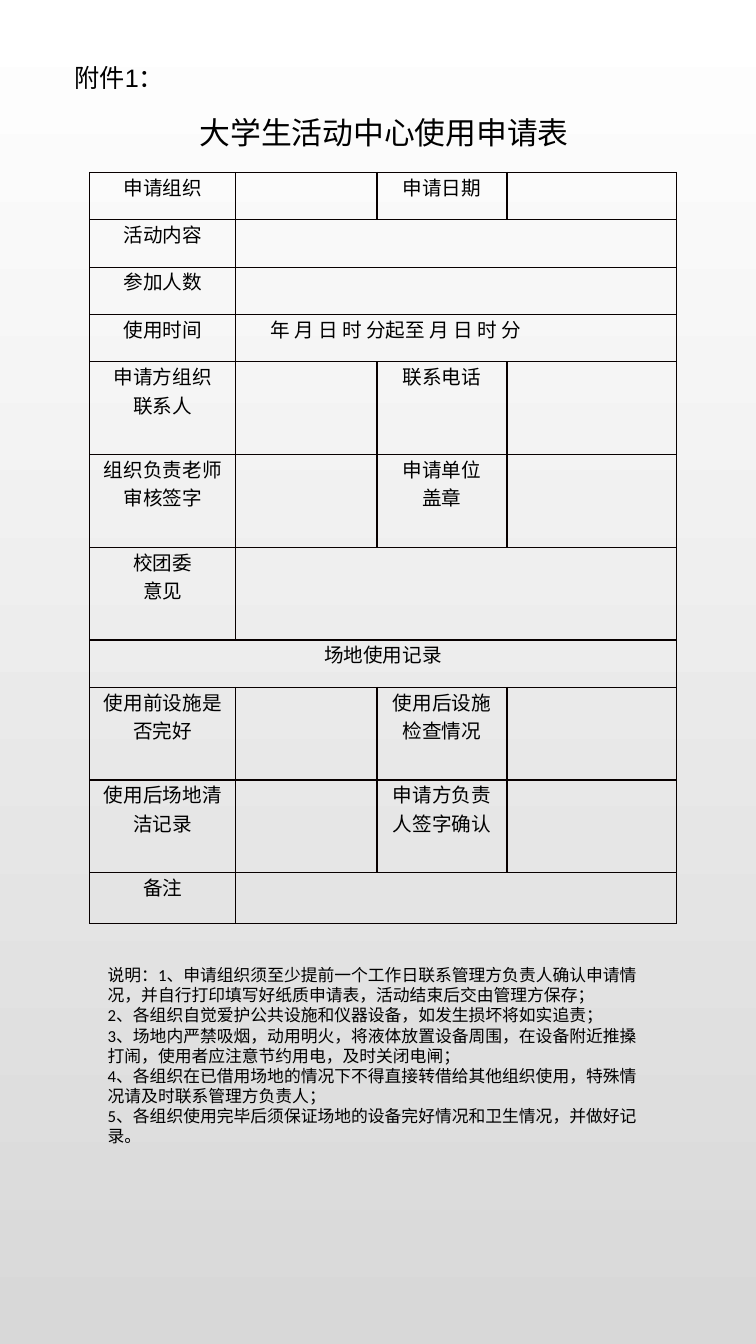
from dataclasses import dataclass

from lxml.etree import SubElement
from pptx import Presentation
from pptx.dml.color import RGBColor
from pptx.enum.text import MSO_ANCHOR as Anchor, MSO_AUTO_SIZE as AutoSize, PP_ALIGN as Align
from pptx.oxml.ns import qn
from pptx.util import Pt

PX = 9144


@dataclass(frozen=True)
class Theme:
    """Colours, fonts and type sizes of the form."""
    ink: str = "000000"
    rule: str = "080000"
    page_top: str = "FFFFFF"
    page_bottom: str = "D8D8D8"
    chinese: str = "Noto Sans CJK SC"
    body: str = "Calibri"
    label: str = "Arial"
    title_size: int = 22
    label_size: int = 18
    cell_size: int = 14
    guide_size: int = 12
    guide_leading: float = 14.4


THEME = Theme()

COLUMNS = [145, 140, 129, 168]
SHORT, TALL, LAST = 47, 92, 50
TIME_SPAN = "年 月 日 时 分起至 月 日 时 分"
TIME_INDENT = 27
ROWS = [
    (SHORT, ["申请组织", "", "申请日期", ""]),
    (SHORT, ["活动内容", ""]),
    (SHORT, ["参加人数", ""]),
    (SHORT, ["使用时间", TIME_SPAN]),
    (TALL, ["申请方组织\n联系人", "", "联系电话", ""]),
    (TALL, ["组织负责老师审核签字", "", "申请单位\n盖章", ""]),
    (TALL, ["校团委\n意见", ""]),
    (SHORT, ["场地使用记录"]),
    (TALL, ["使用前设施是否完好", "", "使用后设施检查情况", ""]),
    (TALL, ["使用后场地清洁记录", "", "申请方负责人签字确认", ""]),
    (LAST, ["备注", ""]),
]
GUIDE = [
    "说明：1、申请组织须至少提前一个工作日联系管理方负责人确认申请情况，并自行打印填写好纸质申请表，活动结束后交由管理方保存；",
    "2、各组织自觉爱护公共设施和仪器设备，如发生损坏将如实追责；",
    "3、场地内严禁吸烟，动用明火，将液体放置设备周围，在设备附近推搡打闹，使用者应注意节约用电，及时关闭电闸；",
    "4、各组织在已借用场地的情况下不得直接转借给其他组织使用，特殊情况请及时联系管理方负责人；",
    "5、各组织使用完毕后须保证场地的设备完好情况和卫生情况，并做好记录。",
]


def write(frame, text, font, size, align=Align.LEFT):
    """Fill a text frame with one paragraph per line of text."""
    frame.text = text
    for para in frame.paragraphs:
        para.alignment = align
        para.font.name = font
        para.font.size = Pt(size)
        para.font.color.rgb = RGBColor.from_string(THEME.ink)
        for span in para.runs:
            SubElement(span.font._element, qn("a:ea"), typeface=THEME.chinese)


def place(shape, box):
    """Move a shape to a px box."""
    shape.left, shape.top, shape.width, shape.height = (n * PX for n in box)


def fit_frame(frame, anchor):
    """Wrap a text frame at a fixed size with even insets."""
    frame.word_wrap = True
    frame.auto_size = AutoSize.NONE
    frame.vertical_anchor = anchor
    frame.margin_left = frame.margin_right = 10 * PX
    frame.margin_top = frame.margin_bottom = 5 * PX


def paint_background(page):
    """Shade the page from top to bottom."""
    fill = page.background.fill
    fill.gradient()
    fill.gradient_angle = 270
    for stop, colour in zip(fill.gradient_stops, (THEME.page_top, THEME.page_bottom)):
        stop.color.rgb = RGBColor.from_string(colour)


def add_title(page, box):
    """Set the form's name in the title placeholder."""
    title = page.shapes.title
    place(title, box)
    fit_frame(title.text_frame, Anchor.MIDDLE)
    write(title.text_frame, "大学生活动中心使用申请表", THEME.body, THEME.title_size, Align.CENTER)


def add_label(page, box):
    """Add the attachment number."""
    frame = page.shapes.add_textbox(*(n * PX for n in box)).text_frame
    fit_frame(frame, Anchor.MIDDLE)
    write(frame, "附件1：", THEME.label, THEME.label_size)


def add_guide(page, box):
    """Add the numbered instructions."""
    frame = page.shapes.add_textbox(*(n * PX for n in box)).text_frame
    fit_frame(frame, Anchor.TOP)
    write(frame, "\n".join(GUIDE), THEME.body, THEME.guide_size)
    for para in frame.paragraphs:
        para.line_spacing = Pt(THEME.guide_leading)


def style_cell(cell):
    """Give a cell thin rules, no fill and tight insets."""
    cell.margin_left = cell.margin_right = 7 * PX
    cell.margin_top = cell.margin_bottom = 0
    properties = cell._tc.get_or_add_tcPr()
    for side in ("lnL", "lnR", "lnT", "lnB"):
        line = SubElement(properties, qn(f"a:{side}"), w=str(Pt(1)))
        solid = SubElement(line, qn("a:solidFill"))
        SubElement(solid, qn("a:srgbClr"), val=THEME.rule)
    cell.fill.background()


def add_form(page, box):
    """Add the application table, stretching the last cell of short rows."""
    table = page.shapes.add_table(len(ROWS), len(COLUMNS), *(n * PX for n in box)).table
    table.first_row = table.horz_banding = False
    for column, width in zip(table.columns, COLUMNS):
        column.width = width * PX
    for cell in table.iter_cells():
        style_cell(cell)
    for index, (height, texts) in enumerate(ROWS):
        table.rows[index].height = height * PX
        last = len(texts) - 1
        if len(texts) < len(COLUMNS):
            table.cell(index, last).merge(table.cell(index, len(COLUMNS) - 1))
        for column, text in enumerate(texts):
            frame = table.cell(index, column).text_frame
            align = Align.LEFT if text == TIME_SPAN else Align.CENTER
            write(frame, text, THEME.chinese, THEME.cell_size, align)
            if text == TIME_SPAN:
                frame.paragraphs[0]._p.get_or_add_pPr().set("marL", str(TIME_INDENT * PX))


def main():
    """Build the one-page application form."""
    deck = Presentation()
    deck.slide_width, deck.slide_height = 750 * PX, 1333 * PX
    page = deck.slides.add_slide(deck.slide_layouts[5])
    paint_background(page)
    add_title(page, (90, 108, 582, 47))
    add_form(page, (89, 171, sum(COLUMNS), sum(height for height, _ in ROWS)))
    add_guide(page, (97, 952, 556, 192))
    add_label(page, (64, 57, 621, 40))
    deck.save("out.pptx")


if __name__ == "__main__":
    main()
